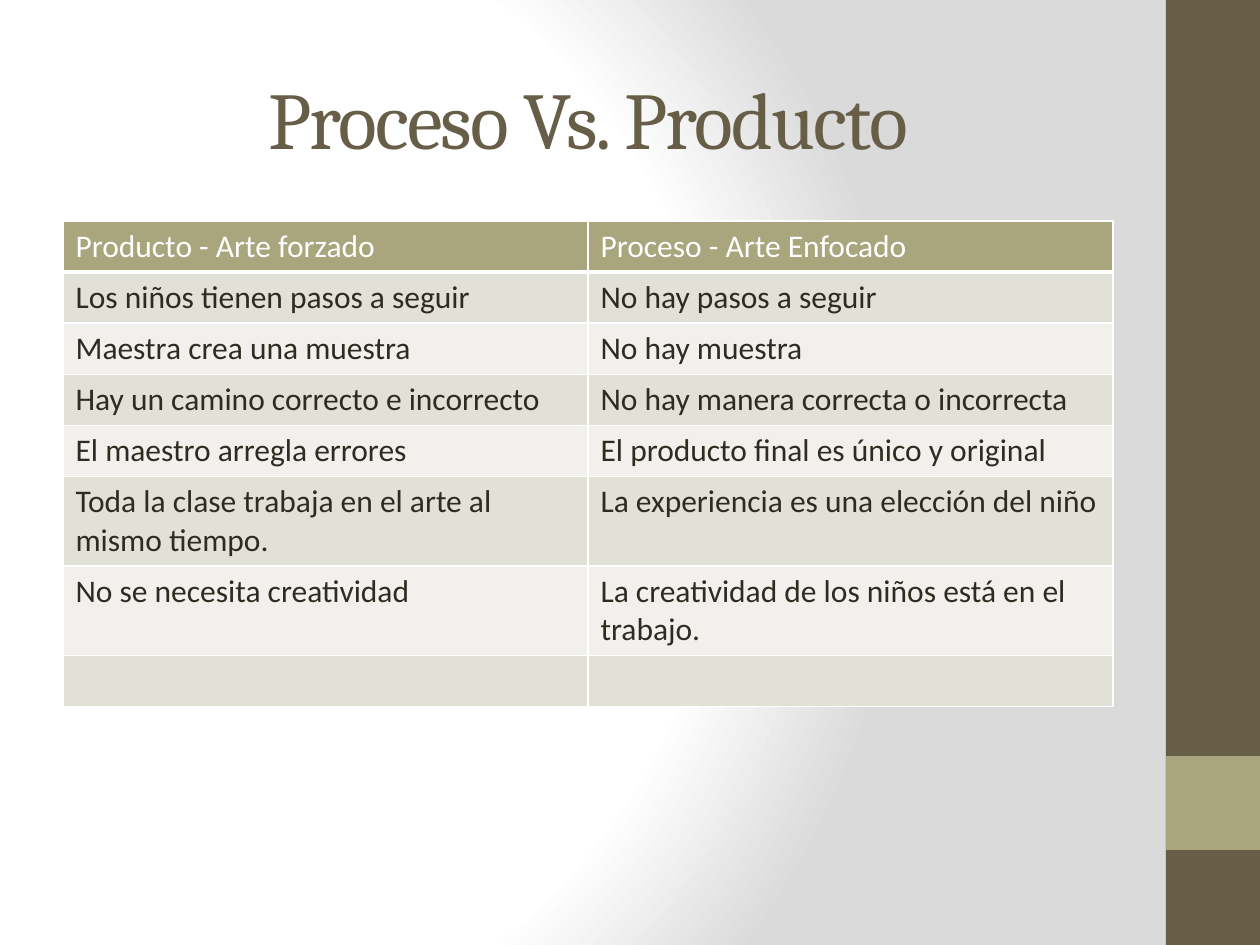
"""Build the slide that compares process art with product art."""
from dataclasses import dataclass

import lxml.etree
import pptx
import pptx.dml.color
import pptx.enum.shapes
import pptx.enum.text
import pptx.oxml
import pptx.oxml.ns
import pptx.util

EMU_PER_PX = 914400 / 126


@dataclass(frozen=True)
class Theme:
    brown: str = "675E47"
    olive: str = "A9A57C"
    ink: str = "2F2B20"
    white: str = "FFFFFF"
    grey: str = "DADADA"
    bands: tuple[str, str] = ("E2E1D7", "F1F0EC")
    title_font: str = "Cambria"
    body_font: str = "Calibri"
    title_size: int = 46
    body_size: int = 18


@dataclass(frozen=True)
class Box:
    left: int
    top: int
    width: int
    height: int

    def emu(self) -> list[pptx.util.Emu]:
        return [px(value) for value in (self.left, self.top, self.width, self.height)]


@dataclass(frozen=True)
class Panel:
    box: Box
    color: str


@dataclass(frozen=True)
class Comparison:
    product: str
    process: str


THEME = Theme()
SLIDE_WIDTH, SLIDE_HEIGHT = 1260, 945
TITLE = "Proceso Vs. Producto"
TITLE_BOX = Box(63, 38, 1050, 158)
ROW_HEIGHT = 51
PANELS = (
    Panel(Box(1166, 0, 94, 945), THEME.brown),
    Panel(Box(1166, 756, 94, 94), THEME.olive),
)
COMPARISONS = (
    Comparison("Producto - Arte forzado", "Proceso - Arte Enfocado"),
    Comparison("Los niños tienen pasos a seguir", "No hay pasos a seguir"),
    Comparison("Maestra crea una muestra", "No hay muestra"),
    Comparison("Hay un camino correcto e incorrecto", "No hay manera correcta o incorrecta"),
    Comparison("El maestro arregla errores", "El producto final es único y original"),
    Comparison("Toda la clase trabaja en el arte al mismo tiempo.", "La experiencia es una elección del niño"),
    Comparison("No se necesita creatividad", "La creatividad de los niños está en el trabajo."),
    Comparison("", ""),
)
TABLE_BOX = Box(63, 221, 1050, ROW_HEIGHT * len(COMPARISONS))


def px(value: int) -> pptx.util.Emu:
    return pptx.util.Emu(round(value * EMU_PER_PX))


def rgb(color: str) -> pptx.dml.color.RGBColor:
    return pptx.dml.color.RGBColor.from_string(color)


def format_runs(text_frame, font_name: str, size: int, color: str) -> None:
    for paragraph in text_frame.paragraphs:
        for run in paragraph.runs:
            run.font.name = font_name
            run.font.size = pptx.util.Pt(size)
            run.font.bold = False
            run.font.color.rgb = rgb(color)


def paint_background(slide) -> None:
    slide.background.fill.gradient()
    gradient = slide.element.find(".//" + pptx.oxml.ns.qn("a:gradFill"))
    stops = "".join(
        f'<a:gs pos="{position * 1000}"><a:srgbClr val="{color}"/></a:gs>'
        for position, color in ((0, THEME.white), (75, THEME.white), (100, THEME.grey))
    )
    radial = pptx.oxml.parse_xml(
        f'<a:gradFill {pptx.oxml.ns.nsdecls("a")} rotWithShape="1"><a:gsLst>{stops}</a:gsLst>'
        '<a:path path="circle"><a:fillToRect l="20000" t="50000" r="100000" b="50000"/></a:path>'
        "</a:gradFill>"
    )
    gradient.getparent().replace(gradient, radial)


def draw_panel(slide, panel: Panel) -> None:
    shape = slide.shapes.add_shape(pptx.enum.shapes.MSO_SHAPE.RECTANGLE, *panel.box.emu())
    shape.shadow.inherit = False
    shape.fill.solid()
    shape.fill.fore_color.rgb = rgb(panel.color)
    shape.line.fill.background()


def draw_title(slide) -> None:
    title = slide.shapes.title
    title.left, title.top, title.width, title.height = TITLE_BOX.emu()
    text_frame = title.text_frame
    text_frame.text = TITLE
    text_frame.auto_size = pptx.enum.text.MSO_AUTO_SIZE.NONE
    text_frame.vertical_anchor = pptx.enum.text.MSO_ANCHOR.MIDDLE
    text_frame.paragraphs[0].alignment = pptx.enum.text.PP_ALIGN.CENTER
    format_runs(text_frame, THEME.title_font, THEME.title_size, THEME.brown)
    text_frame.paragraphs[0].runs[0].font._element.set("spc", "-100")


def set_borders(cell, top: int, bottom: int) -> None:
    properties = cell._tc.get_or_add_tcPr()
    widths = {"a:lnL": 1, "a:lnR": 1, "a:lnT": top, "a:lnB": bottom}
    for index, (tag, width) in enumerate(widths.items()):
        line = lxml.etree.Element(pptx.oxml.ns.qn(tag), w=str(pptx.util.Pt(width)))
        fill = lxml.etree.SubElement(line, pptx.oxml.ns.qn("a:solidFill"))
        lxml.etree.SubElement(fill, pptx.oxml.ns.qn("a:srgbClr"), val=THEME.white)
        properties.insert(index, line)


def draw_table(slide) -> None:
    table = slide.shapes.add_table(len(COMPARISONS), 2, *TABLE_BOX.emu()).table
    for row_index, comparison in enumerate(COMPARISONS):
        is_header = row_index == 0
        table.rows[row_index].height = px(ROW_HEIGHT)
        for column_index, text in enumerate((comparison.product, comparison.process)):
            cell = table.cell(row_index, column_index)
            cell.text_frame.text = text
            format_runs(cell.text_frame, THEME.body_font, THEME.body_size, THEME.white if is_header else THEME.ink)
            cell.fill.solid()
            cell.fill.fore_color.rgb = rgb(THEME.olive if is_header else THEME.bands[(row_index - 1) % 2])
            set_borders(cell, top=3 if row_index == 1 else 1, bottom=3 if is_header else 1)


def main() -> None:
    presentation = pptx.Presentation()
    presentation.slide_width, presentation.slide_height = px(SLIDE_WIDTH), px(SLIDE_HEIGHT)
    slide = presentation.slides.add_slide(presentation.slide_layouts[5])
    paint_background(slide)
    for panel in PANELS:
        draw_panel(slide, panel)
    draw_title(slide)
    draw_table(slide)
    presentation.save("out.pptx")


if __name__ == "__main__":
    main()
